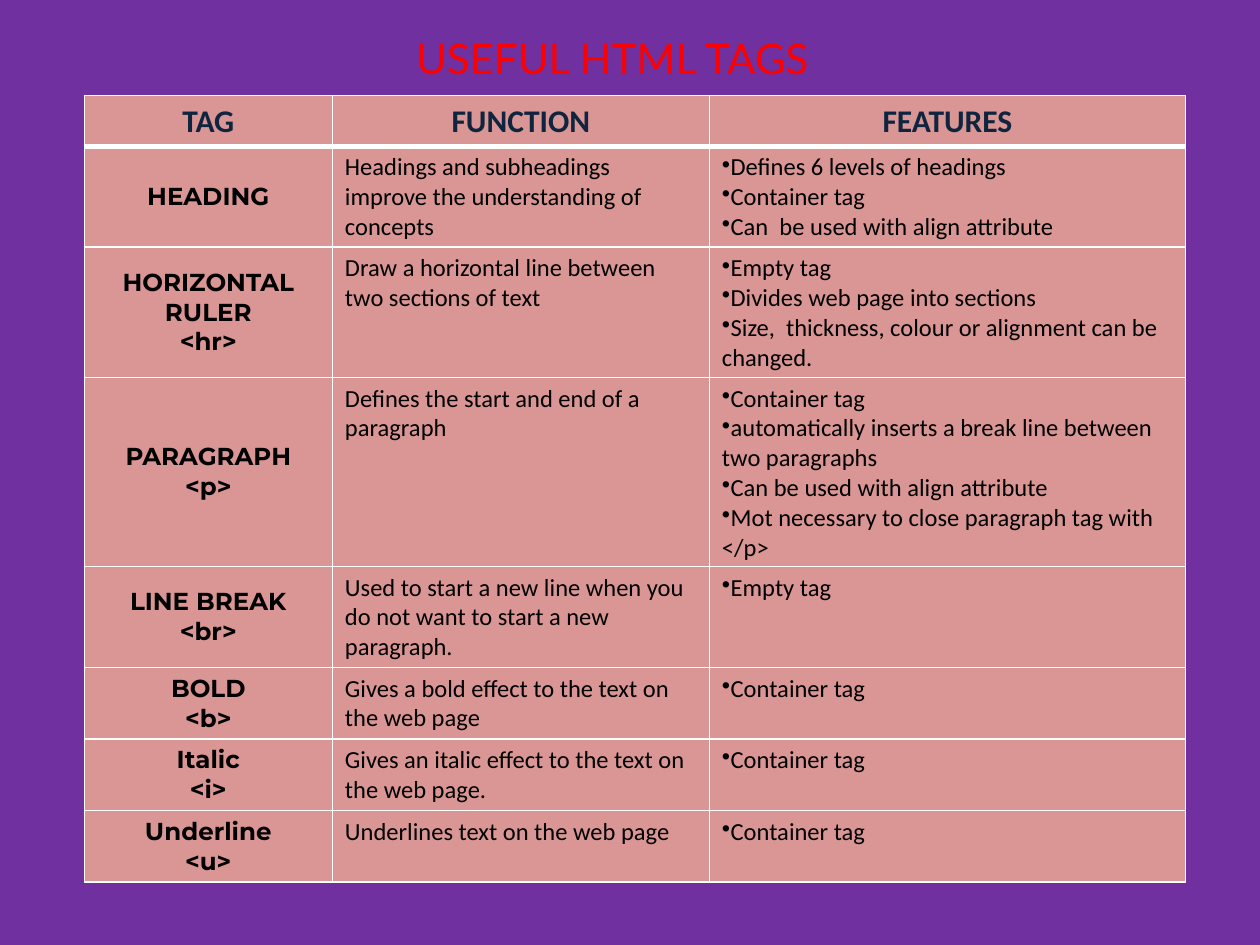
from dataclasses import dataclass

from lxml import etree
from pptx import Presentation
from pptx.dml.color import RGBColor
from pptx.enum.text import MSO_ANCHOR, MSO_AUTO_SIZE, PP_ALIGN
from pptx.oxml.ns import qn
from pptx.util import Cm, Pt

CENTER, LEFT = PP_ALIGN.CENTER, PP_ALIGN.LEFT
TOP, MIDDLE = MSO_ANCHOR.TOP, MSO_ANCHOR.MIDDLE
FIT_SHAPE = MSO_AUTO_SIZE.SHAPE_TO_FIT_TEXT

COLORS = {
    "background": "7030A0",
    "title": "FF0000",
    "cell": "D99694",
    "border": "FFFFFF",
    "header": "0F243E",
    "body": "000000",
}
COLUMN_WIDTHS = (5, 7.6, 9.6)
HEADER_HEIGHT, ROW_HEIGHT = 1, 1.04
THIN, THICK = Pt(1), Pt(3)


@dataclass(frozen=True)
class TextStyle:
    font: str
    size: int
    color: str
    bold: bool = False
    align: PP_ALIGN = LEFT
    anchor: MSO_ANCHOR = TOP
    bullet: str = ""


@dataclass(frozen=True)
class TagRow:
    tag: str
    function: str
    features: str


TITLE = TextStyle("Lato", 24, "title", align=CENTER)
HEADER = TextStyle("Calibri", 18, "header", bold=True, align=CENTER)
ROW_STYLES = (
    TextStyle("Montserrat", 14, "body", bold=True, align=CENTER, anchor=MIDDLE),
    TextStyle("Calibri", 14, "body"),
    TextStyle("Calibri", 14, "body", bullet="•"),
)

HEADINGS = TagRow("TAG", "FUNCTION", "FEATURES")
TAG_ROWS = (
    TagRow(
        "HEADING",
        "Headings and subheadings improve the understanding of concepts",
        "Defines 6 levels of headings\nContainer tag\n"
        "Can  be used with align attribute",
    ),
    TagRow(
        "HORIZONTAL RULER\n<hr>",
        "Draw a horizontal line between two sections of text",
        "Empty tag\nDivides web page into sections\n"
        "Size,  thickness, colour or alignment can be changed.",
    ),
    TagRow(
        "PARAGRAPH\n<p>",
        "Defines the start and end of a paragraph",
        "Container tag\n"
        "automatically inserts a break line between two paragraphs\n"
        "Can be used with align attribute\n"
        "Mot necessary to close paragraph tag with </p>",
    ),
    TagRow(
        "LINE BREAK\n<br>",
        "Used to start a new line when you do not want to start a new paragraph.",
        "Empty tag",
    ),
    TagRow(
        "BOLD\n<b>",
        "Gives a bold effect to the text on the web page",
        "Container tag",
    ),
    TagRow(
        "Italic\n<i>",
        "Gives an italic effect to the text on the web page.",
        "Container tag",
    ),
    TagRow("Underline\n<u>", "Underlines text on the web page", "Container tag"),
)


def color(name: str) -> RGBColor:
    """Return the named colour."""
    return RGBColor.from_string(COLORS[name])


def write_text(text_frame, text: str, style: TextStyle) -> None:
    """Write text with one paragraph per line and format it."""
    text_frame.text = text
    for para in text_frame.paragraphs:
        para.alignment = style.align
        if style.bullet:
            properties = para._p.get_or_add_pPr()
            properties.set("marL", "0")
            properties.set("indent", "0")
            etree.SubElement(properties, qn("a:buChar"), char=style.bullet)
        for span in para.runs:
            span.font.name = style.font
            span.font.size = Pt(style.size)
            span.font.bold = style.bold
            span.font.color.rgb = color(style.color)


def draw_borders(cell, top: int, bottom: int) -> None:
    """Outline a cell with the given top and bottom line widths."""
    properties = cell._tc.get_or_add_tcPr()
    widths = {"a:lnL": THIN, "a:lnR": THIN, "a:lnT": top, "a:lnB": bottom}
    for side, width in widths.items():
        line = etree.SubElement(properties, qn(side), w=str(width))
        fill = etree.SubElement(line, qn("a:solidFill"))
        etree.SubElement(fill, qn("a:srgbClr"), val=COLORS["border"])


def fill_cell(cell, text: str, style: TextStyle, top: int, bottom: int) -> None:
    """Give a cell its borders, fill and text."""
    draw_borders(cell, top, bottom)
    cell.fill.solid()
    cell.fill.fore_color.rgb = color("cell")
    cell.vertical_anchor = style.anchor
    write_text(cell.text_frame, text, style)


def add_title(page, text: str) -> None:
    """Add the page title."""
    box = page.shapes.add_textbox(Cm(0), Cm(0.53), Cm(24.69), Cm(1.27))
    box.text_frame.word_wrap = True
    box.text_frame.auto_size = FIT_SHAPE
    write_text(box.text_frame, text, TITLE)


def add_tag_table(page) -> None:
    """Add the table of tags below the title."""
    rows = (HEADINGS, *TAG_ROWS)
    height = HEADER_HEIGHT + ROW_HEIGHT * len(TAG_ROWS)
    table = page.shapes.add_table(
        len(rows), len(COLUMN_WIDTHS),
        Cm(1.7), Cm(1.93), Cm(sum(COLUMN_WIDTHS)), Cm(height),
    ).table
    table.first_row = False
    table.horz_banding = False
    for column, width in zip(table.columns, COLUMN_WIDTHS):
        column.width = Cm(width)
    for index, row in enumerate(rows):
        is_header = index == 0
        table.rows[index].height = Cm(HEADER_HEIGHT if is_header else ROW_HEIGHT)
        styles = (HEADER,) * len(COLUMN_WIDTHS) if is_header else ROW_STYLES
        top = THICK if index == 1 else THIN
        bottom = THICK if is_header else THIN
        texts = (row.tag, row.function, row.features)
        for cell, text, style in zip(table.rows[index].cells, texts, styles):
            fill_cell(cell, text, style, top, bottom)


def main() -> None:
    """Build the deck and save it."""
    deck = Presentation()
    deck.slide_width, deck.slide_height = Cm(25.4), Cm(19.05)
    page = deck.slides.add_slide(deck.slide_layouts[6])
    page.background.fill.solid()
    page.background.fill.fore_color.rgb = color("background")
    add_title(page, "USEFUL HTML TAGS")
    add_tag_table(page)
    deck.save("out.pptx")


if __name__ == "__main__":
    main()
